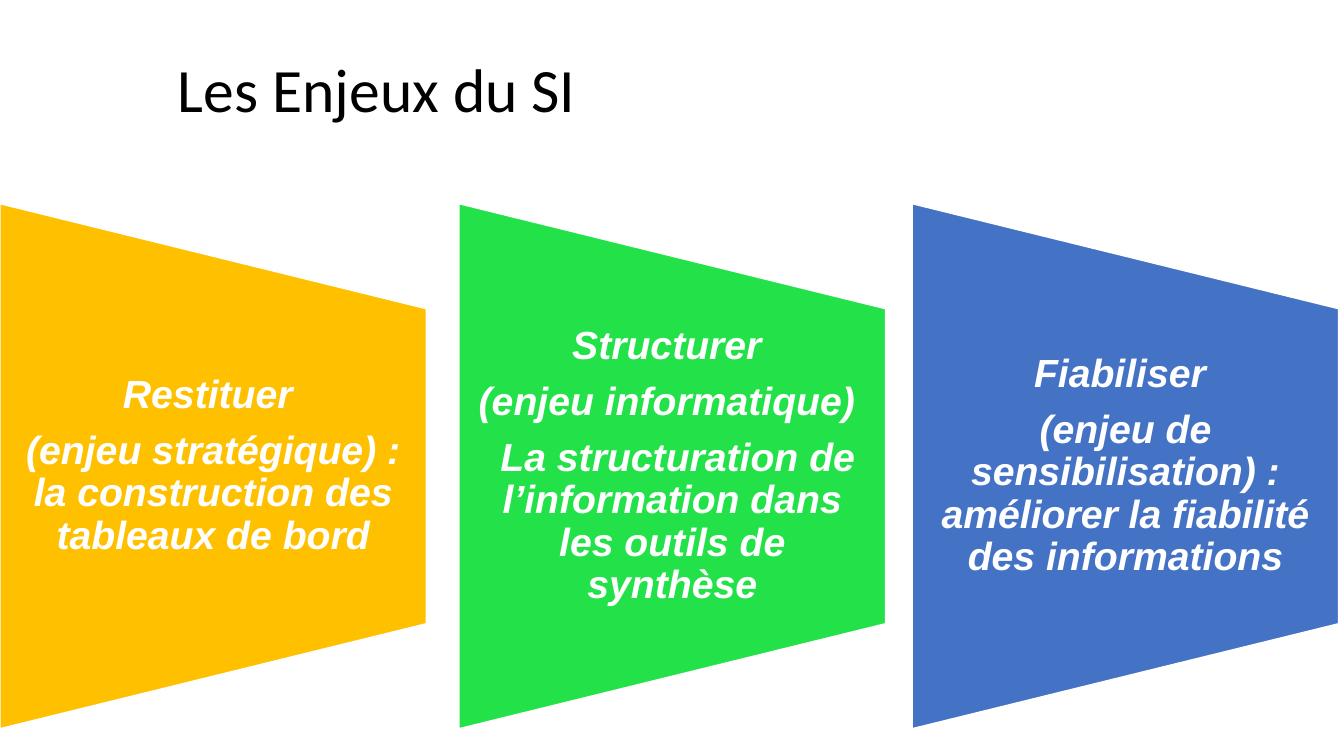
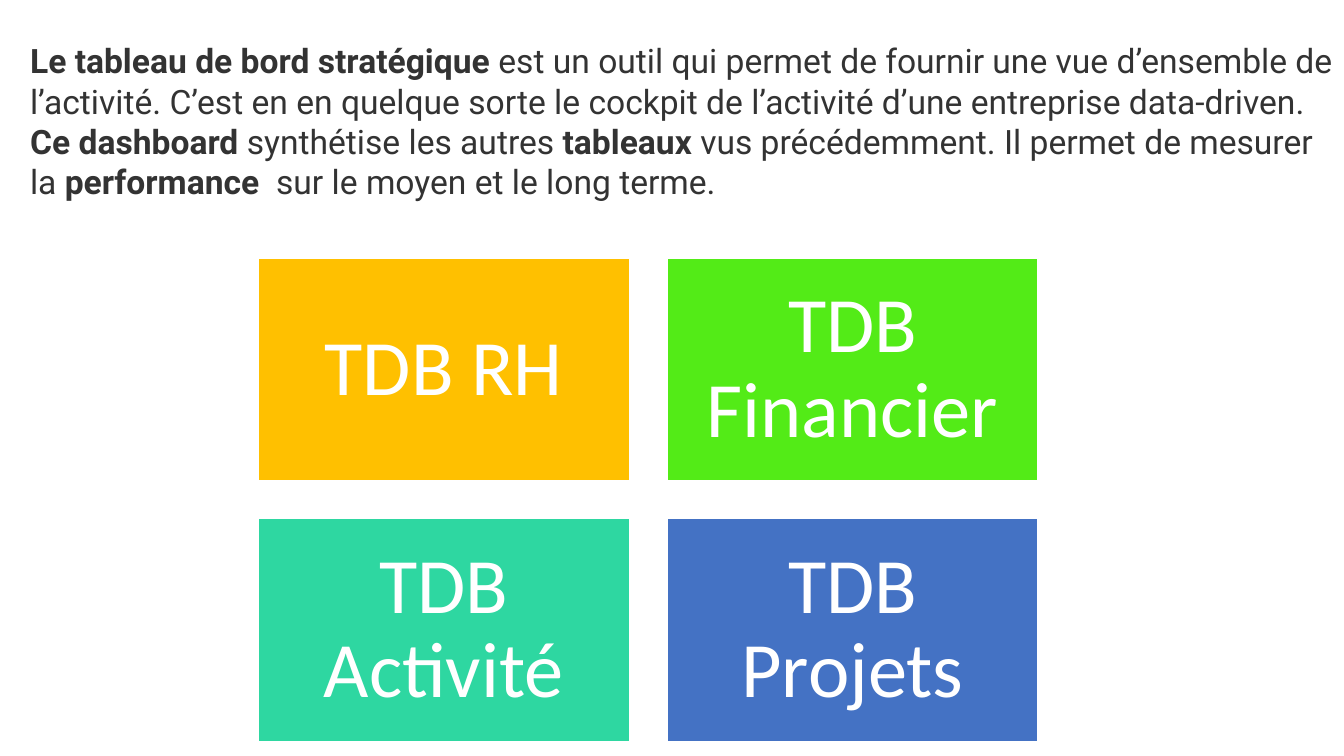
from pptx import Presentation
from pptx.dml.color import RGBColor
from pptx.enum.shapes import MSO_SHAPE
from pptx.enum.text import MSO_ANCHOR, PP_ALIGN
from pptx.util import Pt

TRAPEZOID = MSO_SHAPE.FLOWCHART_MANUAL_OPERATION
RECTANGLE = MSO_SHAPE.RECTANGLE
TOP, MIDDLE = MSO_ANCHOR.TOP, MSO_ANCHOR.MIDDLE
LEFT, CENTER = PP_ALIGN.LEFT, PP_ALIGN.CENTER

BLACK = RGBColor(0x00, 0x00, 0x00)
WHITE = RGBColor(0xFF, 0xFF, 0xFF)
DARK_GREY = RGBColor(0x33, 0x33, 0x33)
AMBER = RGBColor(0xFF, 0xC0, 0x00)
GREEN = RGBColor(0x23, 0xE1, 0x48)
LIME = RGBColor(0x53, 0xEB, 0x17)
TEAL = RGBColor(0x2E, 0xD7, 0xA1)
BLUE = RGBColor(0x44, 0x72, 0xC4)

TITLE = "Les Enjeux du SI"
CHALLENGES = [
    (0, AMBER, ["Restituer ",
                "(enjeu stratégique) : la construction des tableaux de bord"]),
    (327.9, GREEN, ["Structurer ", "(enjeu informatique) ",
                    " La structuration de l’information dans les outils de synthèse"]),
    (651.6, BLUE, ["Fiabiliser ",
                   "(enjeu de sensibilisation) : améliorer la fiabilité des informations"]),
]
INTRODUCTION = [
    [("Le tableau de bord stratégique ", True),
     ("est un outil qui permet de fournir une vue d’ensemble de l’activité. "
      "C’est en en quelque sorte le cockpit de l’activité d’une entreprise data-driven.", False)],
    [("Ce dashboard ", True), ("synthétise les autres ", False), ("tableaux", True),
     (" vus précédemment. Il permet de mesurer la ", False), ("performance ", True),
     (" sur le moyen et le long terme.", False)],
]
DASHBOARDS = [("TDB RH", AMBER), ("TDB Financier", LIME),
              ("TDB Activité", TEAL), ("TDB Projets", BLUE)]

SLIDE_SIZE = (960, 540)
TITLE_BOX = (120, 38, 647, 56)
INTRODUCTION_BOX = (14.4, 25.2, 946, 181)
CHALLENGE_WIDTH, CHALLENGE_HEIGHT, CHALLENGE_TOP = 304.6, 375, 145.5
CHALLENGE_TEXT_TOP, CHALLENGE_TEXT_HEIGHT = 220.3, 225.4
CARD_WIDTH, CARD_HEIGHT, CARD_GAP = 265, 159, 27
CARD_LEFT, CARD_TOP, CARD_COLUMNS = 184.5, 184.5, 2


def write_text(shape, paragraphs, *, size, font="Calibri", color=WHITE, italic=False,
               align=CENTER, anchor=MIDDLE, line_spacing=0.9, space_after=0,
               margins=(7.2, 3.6)):
    frame = shape.text_frame
    frame.word_wrap = True
    frame.vertical_anchor = anchor
    frame.margin_left = frame.margin_right = Pt(margins[0])
    frame.margin_top = frame.margin_bottom = Pt(margins[1])
    for index, runs in enumerate(paragraphs):
        paragraph = frame.add_paragraph() if index else frame.paragraphs[0]
        paragraph.alignment = align
        paragraph.line_spacing = line_spacing
        paragraph.space_after = Pt(space_after)
        for text, bold in runs:
            run = paragraph.add_run()
            run.text = text
            run.font.name = font
            run.font.size = Pt(size)
            run.font.bold = bold
            run.font.italic = italic
            run.font.color.rgb = color


def add_text(slide, box, paragraphs, **text_format):
    write_text(slide.shapes.add_textbox(*map(Pt, box)), paragraphs, **text_format)


def add_panel(slide, kind, box, color):
    shape = slide.shapes.add_shape(kind, *map(Pt, box))
    shape.shadow.inherit = False
    shape.fill.solid()
    shape.fill.fore_color.rgb = color
    shape.line.color.rgb = WHITE
    shape.line.width = Pt(1)
    return shape


def add_challenge(slide, left, color, texts):
    overhang = (CHALLENGE_HEIGHT - CHALLENGE_WIDTH) / 2
    trapezoid = add_panel(slide, TRAPEZOID, (left - overhang, CHALLENGE_TOP + overhang,
                                             CHALLENGE_HEIGHT, CHALLENGE_WIDTH), color)
    trapezoid.rotation = 270
    add_text(slide, (left, CHALLENGE_TEXT_TOP, CHALLENGE_WIDTH, CHALLENGE_TEXT_HEIGHT),
             [[(text, True)] for text in texts], size=28, font="Arial", italic=True,
             space_after=9.8, margins=(13.7, 0))


def build_challenges(slide):
    add_text(slide, TITLE_BOX, [[(TITLE, False)]], size=44, color=BLACK, align=LEFT)
    for left, color, texts in CHALLENGES:
        add_challenge(slide, left, color, texts)


def build_dashboards(slide):
    add_text(slide, INTRODUCTION_BOX, INTRODUCTION, size=24, font="Roboto", color=DARK_GREY,
             align=LEFT, anchor=TOP, line_spacing=1)
    for index, (name, color) in enumerate(DASHBOARDS):
        row, column = divmod(index, CARD_COLUMNS)
        box = (CARD_LEFT + column * (CARD_WIDTH + CARD_GAP),
               CARD_TOP + row * (CARD_HEIGHT + CARD_GAP), CARD_WIDTH, CARD_HEIGHT)
        card = add_panel(slide, RECTANGLE, box, color)
        write_text(card, [[(name, False)]], size=56, margins=(16.8, 16.8))


def main():
    presentation = Presentation()
    presentation.slide_width, presentation.slide_height = map(Pt, SLIDE_SIZE)
    blank_layout = presentation.slide_layouts[6]
    for build in (build_challenges, build_dashboards):
        build(presentation.slides.add_slide(blank_layout))
    presentation.save("out.pptx")


if __name__ == "__main__":
    main()
